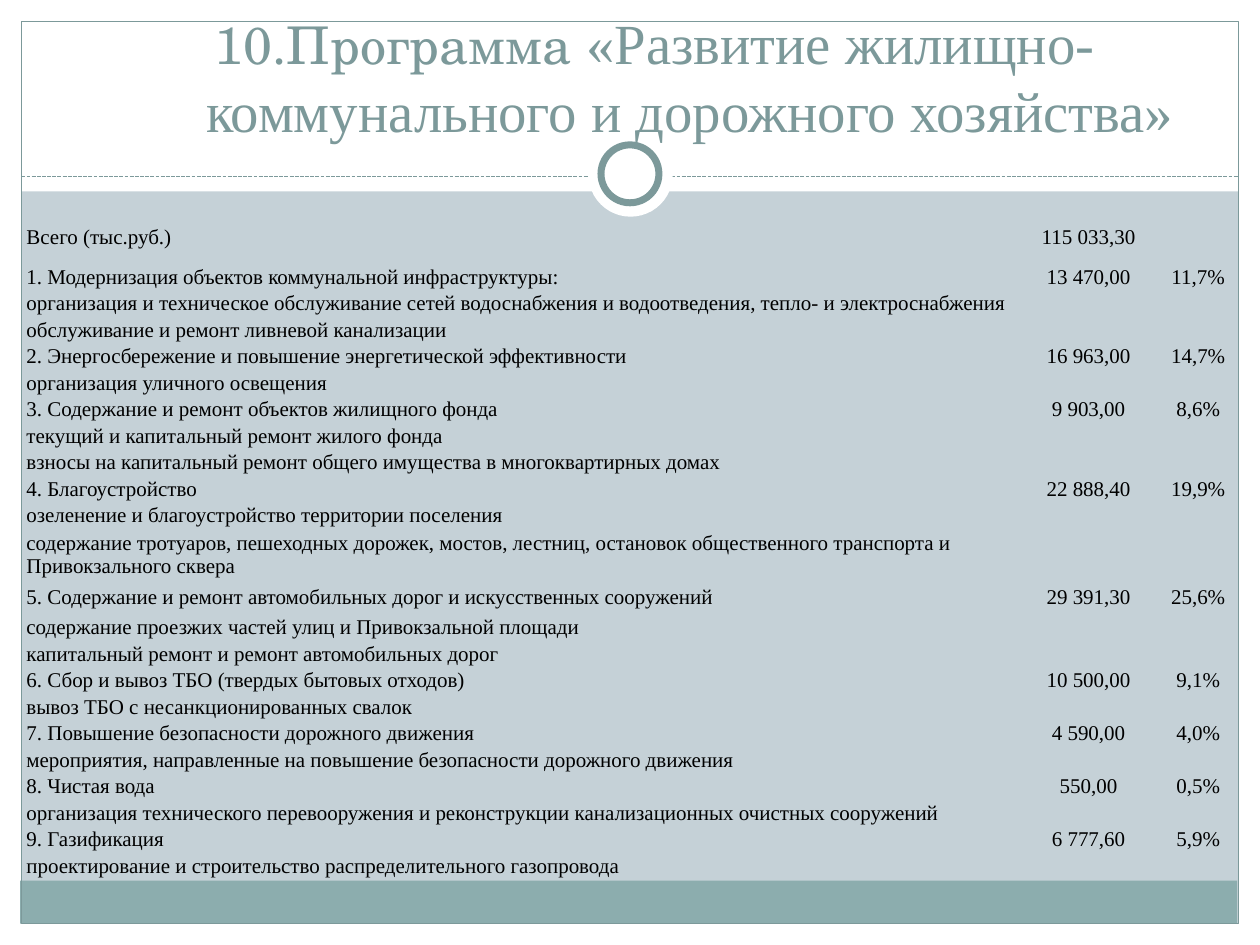
"""Builds the slide on the housing, utilities and roads programme."""
from lxml.etree import SubElement
from pptx import Presentation
from pptx.dml.color import RGBColor
from pptx.enum.dml import MSO_LINE
from pptx.enum.shapes import MSO_CONNECTOR, MSO_SHAPE as SHAPE
from pptx.enum.text import MSO_ANCHOR, PP_ALIGN
from pptx.oxml.ns import qn
from pptx.util import Inches, Pt


def color(value):
    return RGBColor.from_string(value)


def style(font, **values):
    font.color.rgb = color(values.pop("color"))
    for key, value in values.items():
        setattr(font, key, value)


WHITE, TEAL, BAND, BACK = "FFFFFF", "7C999A", "8CADAE", "C5D1D7"
SERIF = "Times New Roman"

deck = Presentation()
deck.slide_width, deck.slide_height = Inches(10), Inches(7.5)
slide = deck.slides.add_slide(deck.slide_layouts[6])
slide.background.fill.solid()
slide.background.fill.fore_color.rgb = color(BACK)

frame_parts = [
    (SHAPE.RECTANGLE, (0, 7.33, 10, 0.17), WHITE, None),
    (SHAPE.RECTANGLE, (0, 0, 10, 1.52), WHITE, None),
    (SHAPE.RECTANGLE, (0, 0, 0.17, 7.5), WHITE, None),
    (SHAPE.RECTANGLE, (9.83, 0, 0.17, 7.5), WHITE, None),
    (SHAPE.RECTANGLE, (0.16, 6.99, 9.66, 0.34), BAND, None),
    (SHAPE.RECTANGLE, (0.17, 0.17, 9.66, 7.16), None, 0.75),
    (SHAPE.OVAL, (4.67, 1.05, 0.67, 0.67), WHITE, None),
    (SHAPE.OVAL, (4.77, 1.15, 0.46, 0.46), WHITE, 4),
]
for kind, box, fill, width in frame_parts:
    if kind == SHAPE.OVAL and width is None:
        divider = slide.shapes.add_connector(
            MSO_CONNECTOR.STRAIGHT, Inches(0.17), Inches(1.4), Inches(9.83), Inches(1.4))
        divider.line.color.rgb = color(TEAL)
        divider.line.width = Pt(0.75)
        divider.line.dash_style = MSO_LINE.SQUARE_DOT
        SubElement(divider._element.spPr, qn("a:effectLst"))
    part = slide.shapes.add_shape(kind, *map(Inches, box))
    part.shadow.inherit = False
    if fill:
        part.fill.solid()
        part.fill.fore_color.rgb = color(fill)
    else:
        part.fill.background()
    if width:
        part.line.color.rgb = color(TEAL)
        part.line.width = Pt(width)
    else:
        part.line.fill.background()

title = slide.shapes.add_textbox(*map(Inches, (0.39, 0.21, 9.61, 0.98))).text_frame
title.word_wrap = True
title.vertical_anchor = MSO_ANCHOR.BOTTOM
heading = title.paragraphs[0]
heading.alignment = PP_ALIGN.CENTER
numbering = heading._p.get_or_add_pPr()
numbering.set("marL", str(Inches(0.56)))
numbering.set("indent", str(-Inches(0.56)))
SubElement(numbering, qn("a:buFont"), typeface="TeX Gyre Schola")
SubElement(numbering, qn("a:buAutoNum"), type="arabicPeriod", startAt="10")
for words, size, face in [
    ("Программа ", 29.7, "TeX Gyre Schola"),
    ("«Развитие жилищно-коммунального и дорожного хозяйства»", 32.4, SERIF),
]:
    run = heading.add_run()
    run.text = words
    style(run.font, size=Pt(size), name=face, color=TEAL)

budget = [
    ("Всего (тыс.руб.)", "115 033,30", ""),
    ("1. Модернизация объектов коммунальной инфраструктуры:", "13 470,00", "11,7%"),
    ("организация и техническое обслуживание сетей водоснабжения и водоотведения, "
     "тепло- и электроснабжения", "", ""),
    ("обслуживание и ремонт ливневой канализации", "", ""),
    ("2. Энергосбережение и повышение энергетической эффективности", "16 963,00", "14,7%"),
    ("организация уличного освещения", "", ""),
    ("3. Содержание и ремонт объектов жилищного фонда", "9 903,00", "8,6%"),
    ("текущий и капитальный ремонт жилого фонда", "", ""),
    ("взносы на капитальный ремонт общего имущества в многоквартирных домах", "", ""),
    ("4. Благоустройство", "22 888,40", "19,9%"),
    ("озеленение и благоустройство территории поселения", "", ""),
    ("содержание тротуаров, пешеходных дорожек, мостов, лестниц, остановок "
     "общественного транспорта и Привокзального сквера", "", ""),
    ("5. Содержание и ремонт автомобильных дорог и искусственных сооружений",
     "29 391,30", "25,6%"),
    ("содержание проезжих частей улиц и Привокзальной площади", "", ""),
    ("капитальный ремонт и ремонт автомобильных дорог", "", ""),
    ("6. Сбор и вывоз ТБО (твердых бытовых отходов)", "10 500,00", "9,1%"),
    ("вывоз ТБО с несанкционированных свалок", "", ""),
    ("7. Повышение безопасности дорожного движения", "4 590,00", "4,0%"),
    ("мероприятия, направленные на повышение безопасности дорожного движения", "", ""),
    ("8. Чистая вода", "550,00", "0,5%"),
    ("организация технического перевооружения и реконструкции канализационных "
     "очистных сооружений", "", ""),
    ("9. Газификация", "6 777,60", "5,9%"),
    ("проектирование и строительство распределительного газопровода", "", ""),
]
tall_rows = {0: 0.42, 11: 0.4, 12: 0.27}
cell_format = {
    "margin_left": Inches(0.01), "margin_right": Inches(0.01),
    "margin_top": Inches(0.01), "margin_bottom": 0,
    "vertical_anchor": MSO_ANCHOR.MIDDLE,
}
table = slide.shapes.add_table(
    len(budget), 3, *map(Inches, (0.2, 1.67, 9.61, 5.26))).table
table.first_row = table.horz_banding = False
# The "No Style, No Grid" table style keeps the cells free of borders.
table._tbl.tblPr.find(qn("a:tableStyleId")).text = "{2D5ABB26-0587-4C30-8999-92F81FD0307C}"
for column, width in zip(table.columns, (7.87, 1.14, 0.6)):
    column.width = Inches(width)
for r, entry in enumerate(budget):
    table.rows[r].height = Inches(tall_rows.get(r, 0.2))
    for c, words in enumerate(entry):
        cell = table.cell(r, c)
        cell.fill.background()
        for key, value in cell_format.items():
            setattr(cell, key, value)
        line = cell.text_frame.paragraphs[0]
        line.alignment = PP_ALIGN.CENTER if c else PP_ALIGN.LEFT
        if words:
            run = line.add_run()
            run.text = words
            style(run.font, size=Pt(12), name=SERIF, color="000000")
        else:
            SubElement(line._p, qn("a:endParaRPr"), sz="1200")

deck.save("out.pptx")
